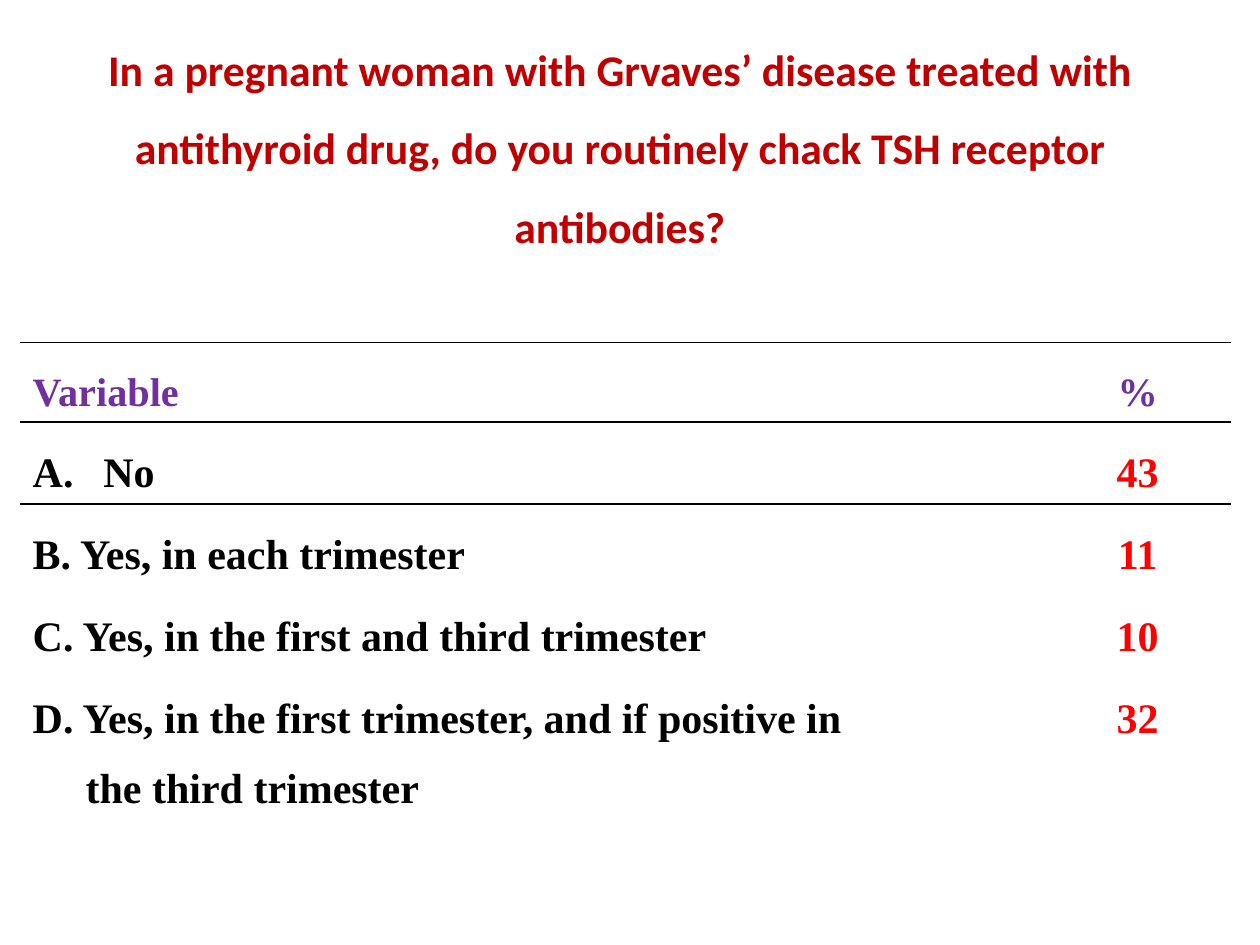
from lxml import etree
from pptx import Presentation
from pptx.dml.color import RGBColor
from pptx.enum.text import MSO_ANCHOR, PP_ALIGN
from pptx.oxml.ns import qn
from pptx.util import Inches, Pt

COLORS = {
    "title": "C00000",
    "header": "7030A0",
    "answer": "000000",
    "percent": "FF0000",
    "rule": "000000",
}
QUESTION = (
    "In a pregnant woman with Grvaves’ disease treated with antithyroid drug, "
    "do you routinely chack TSH receptor antibodies?"
)
ANSWERS = [
    (["No"], "43"),
    (["B. Yes, in each trimester"], "11"),
    (["C. Yes, in the first and third trimester"], "10"),
    (["D. Yes, in the first trimester, and if positive in",
      "the third trimester"], "32"),
]
COLUMN_WIDTHS = [8.13, 1.48]
ROW_HEIGHTS = [0.63, 0.65, 0.65, 0.65, 1.23]
NO_GRID_STYLE = "{2D5ABB26-0587-4C30-8999-92F81FD0307C}"


def style_paragraph(paragraph, size, color, face, align=PP_ALIGN.LEFT):
    paragraph.alignment = align
    paragraph.line_spacing = 1.5
    font = paragraph.font
    font.name = face
    font.size = Pt(size)
    font.bold = True
    font.color.rgb = RGBColor.from_string(COLORS[color])


def indent(paragraph, left, first_line=0):
    properties = paragraph._p.get_or_add_pPr()
    properties.set("marL", str(Inches(left)))
    properties.set("indent", str(Inches(first_line)))
    return properties


def number_with_letter(paragraph):
    properties = indent(paragraph, 0.56, -0.56)
    etree.SubElement(properties, qn("a:buAutoNum"), type="alphaUcPeriod")


def rule_cell(cell, *sides):
    """Draw a black rule on the given sides (lnT, lnB) of a cell."""
    properties = cell._tc.get_or_add_tcPr()
    for position, side in enumerate(sides):
        line = etree.Element(qn(f"a:{side}"), w=str(Pt(1)))
        fill = etree.SubElement(line, qn("a:solidFill"))
        etree.SubElement(fill, qn("a:srgbClr"), val=COLORS["rule"])
        properties.insert(position, line)


def fill_cell(cell, lines, size, color, align=PP_ALIGN.LEFT):
    cell.fill.background()
    cell.margin_top = cell.margin_bottom = Inches(0.04)
    frame = cell.text_frame
    frame.text = "\n".join(lines)
    for continuation in frame.paragraphs[1:]:
        indent(continuation, 0.42)
    if lines == ["No"]:
        number_with_letter(frame.paragraphs[0])
        align = PP_ALIGN.JUSTIFY
    for paragraph in frame.paragraphs:
        style_paragraph(paragraph, size, color, "Times New Roman", align)


def add_question(slide):
    box = slide.shapes.add_textbox(Inches(0.67), Inches(0.17), Inches(8.5), Inches(1.79))
    frame = box.text_frame
    frame.word_wrap = True
    frame.vertical_anchor = MSO_ANCHOR.MIDDLE
    frame.text = QUESTION
    style_paragraph(frame.paragraphs[0], 25, "title", "Calibri", PP_ALIGN.CENTER)


def add_answers(slide):
    table = slide.shapes.add_table(
        len(ROW_HEIGHTS), len(COLUMN_WIDTHS), Inches(0.16), Inches(2.72),
        Inches(sum(COLUMN_WIDTHS)), Inches(sum(ROW_HEIGHTS)),
    ).table
    table.horz_banding = False
    table.first_row = False
    table._tbl.tblPr.find(qn("a:tableStyleId")).text = NO_GRID_STYLE
    for column, width in zip(table.columns, COLUMN_WIDTHS):
        column.width = Inches(width)
    for row, height in zip(table.rows, ROW_HEIGHTS):
        row.height = Inches(height)

    fill_cell(table.cell(0, 0), ["Variable"], 23, "header")
    fill_cell(table.cell(0, 1), ["%"], 23, "header", PP_ALIGN.CENTER)
    for number, (answer, percent) in enumerate(ANSWERS, start=1):
        fill_cell(table.cell(number, 0), answer, 24, "answer")
        fill_cell(table.cell(number, 1), [percent], 24, "percent", PP_ALIGN.CENTER)
    for number in range(2):
        for cell in table.rows[number].cells:
            rule_cell(cell, "lnT", "lnB")


def main():
    presentation = Presentation()
    presentation.slide_width = Inches(10)
    presentation.slide_height = Inches(7.5)
    slide = presentation.slides.add_slide(presentation.slide_layouts[6])
    add_answers(slide)
    add_question(slide)
    presentation.save("out.pptx")


if __name__ == "__main__":
    main()
